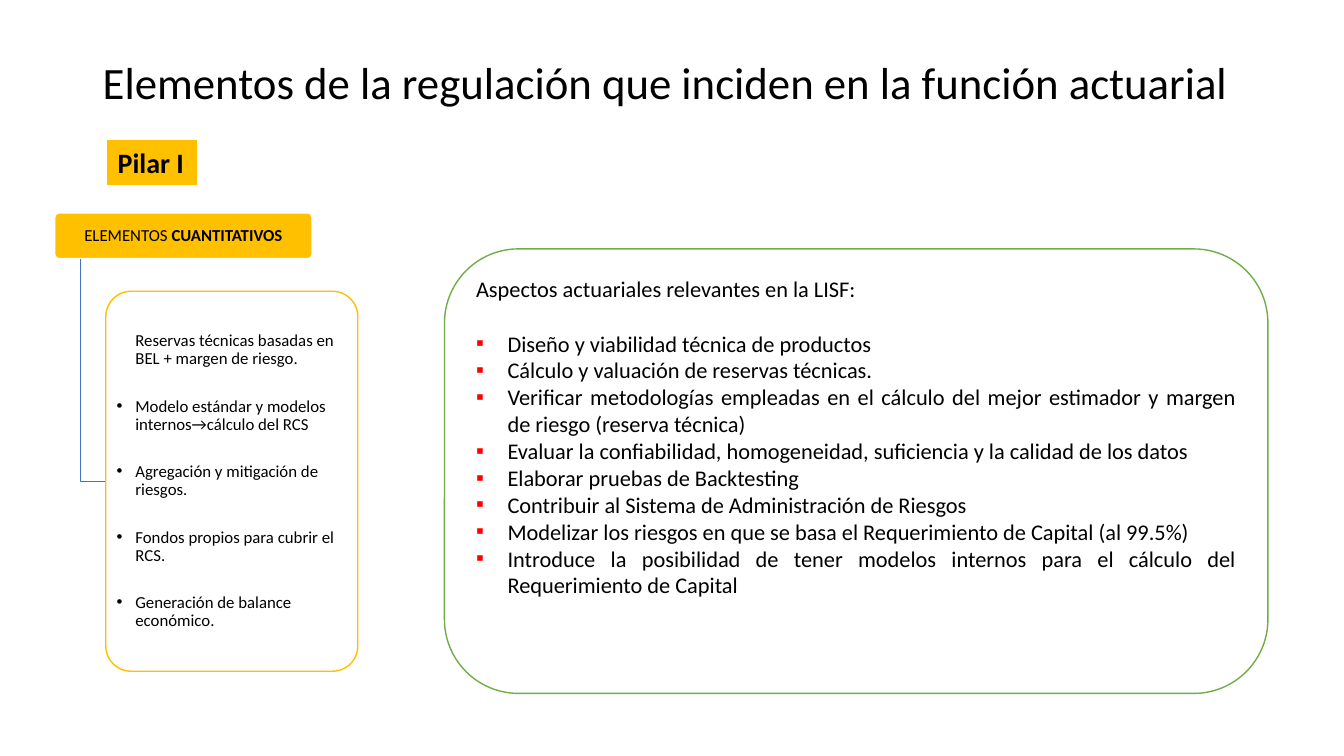
import pptx
import pptx.util
from lxml import etree
from pptx.dml.color import RGBColor
from pptx.enum.shapes import MSO_SHAPE
from pptx.enum.text import MSO_ANCHOR, MSO_AUTO_SIZE, PP_ALIGN
from pptx.oxml.ns import qn

Pt = pptx.util.Pt

# Content
TITLE = "Elementos de la regulación que inciden en la función actuarial"
PILLAR = "Pilar I"
HEADING = [("ELEMENTOS ", False), ("CUANTITATIVOS", True)]
QUANT_INTRO = "Reservas técnicas basadas en BEL + margen de riesgo."
QUANT_ITEMS = [
    "Modelo estándar y modelos internos→cálculo del RCS",
    "Agregación y mitigación de riesgos.",
    "Fondos propios para cubrir el RCS.",
    "Generación de balance económico.",
]
ASPECTS_INTRO = "Aspectos actuariales relevantes en la LISF:"
ASPECTS = [
    "Diseño y viabilidad técnica de productos",
    "Cálculo y valuación de reservas técnicas.",
    "Verificar metodologías empleadas en el cálculo del mejor estimador y margen de riesgo (reserva técnica)",
    "Evaluar la confiabilidad, homogeneidad, suficiencia y la calidad de los datos",
    "Elaborar pruebas de Backtesting",
    "Contribuir al Sistema de Administración de Riesgos",
    "Modelizar los riesgos en que se basa el Requerimiento de Capital (al 99.5%)",
    "Introduce la posibilidad de tener modelos internos para el cálculo del Requerimiento de Capital",
]

# Style
FONT = "Calibri"
BLACK = RGBColor(0x00, 0x00, 0x00)
WHITE = RGBColor(0xFF, 0xFF, 0xFF)
AMBER = RGBColor(0xFF, 0xC0, 0x00)
BLUE = RGBColor(0x44, 0x72, 0xC4)
GREEN = RGBColor(0x70, 0xAD, 0x47)
RED = RGBColor(0xFF, 0x00, 0x00)

# Layout: left, top, width, height in points
TITLE_BOX = (66.2, 21.6, 828, 78.5)
PILLAR_BOX = (77, 100.1, 63.4, 31.7)
HEADING_BOX = (38.9, 151.9, 184.3, 33.1)
QUANT_BOX = (75.6, 208.1, 180, 271.4)
ASPECTS_BOX = (317.5, 177.8, 588.2, 317.5)


def add_box(kind, box, fill, line, weight, anchor, radius=None, inset=None):
    sp = slide.shapes.add_shape(kind, *map(Pt, box))
    sp.shadow.inherit = False
    sp.fill.solid()
    sp.fill.fore_color.rgb = fill
    sp.line.color.rgb = line
    sp.line.width = Pt(weight)
    if radius is not None:
        sp.adjustments[0] = radius
    tf = sp.text_frame
    tf.word_wrap = True
    tf.vertical_anchor = anchor
    if inset is not None:
        tf.margin_left = tf.margin_right = Pt(inset)
        tf.margin_top = tf.margin_bottom = Pt(inset * 0.67)
    return sp


def add_run(p, text, size, bold=False):
    r = p.add_run()
    r.text = text
    r.font.name = FONT
    r.font.size = Pt(size)
    r.font.bold = bold
    r.font.color.rgb = BLACK


def set_indent(p, indent, bullet=None, color=BLACK):
    pPr = p._p.get_or_add_pPr()
    pPr.set("marL", str(Pt(indent)))
    pPr.set("indent", str(-Pt(indent) if bullet else 0))
    if bullet:
        clr = etree.SubElement(pPr, qn("a:buClr"))
        etree.SubElement(clr, qn("a:srgbClr")).set("val", str(color))
        etree.SubElement(pPr, qn("a:buFont")).set("typeface", "Arial")
        etree.SubElement(pPr, qn("a:buChar")).set("char", bullet)


prs = pptx.Presentation()
prs.slide_width, prs.slide_height = Pt(960), Pt(540)
slide = prs.slides.add_slide(prs.slide_layouts[5])

# Title
title = slide.shapes.title
title.left, title.top, title.width, title.height = map(Pt, TITLE_BOX)
tf = title.text_frame
tf.vertical_anchor = MSO_ANCHOR.MIDDLE
p = tf.paragraphs[0]
p.alignment = PP_ALIGN.LEFT
p.line_spacing = 0.9
add_run(p, TITLE, 32)

# Heading of the quantitative elements
sp = add_box(MSO_SHAPE.ROUNDED_RECTANGLE, HEADING_BOX, AMBER, WHITE, 1.5,
             MSO_ANCHOR.MIDDLE, 0.1, 2.4)
p = sp.text_frame.paragraphs[0]
p.alignment = PP_ALIGN.CENTER
p.line_spacing = 0.9
for text, bold in HEADING:
    add_run(p, text, 12, bold)

# Elbow from the heading to the list
x = HEADING_BOX[0] + HEADING_BOX[2] / 10
y = HEADING_BOX[1] + HEADING_BOX[3]
middle = QUANT_BOX[1] + QUANT_BOX[3] / 2
fb = slide.shapes.build_freeform(Pt(x), Pt(y))
fb.add_line_segments([(Pt(x), Pt(middle)), (Pt(QUANT_BOX[0]), Pt(middle))], close=False)
elbow = fb.convert_to_shape()
elbow.shadow.inherit = False
elbow.fill.background()
elbow.line.color.rgb = BLUE
elbow.line.width = Pt(1)

# List of quantitative elements
sp = add_box(MSO_SHAPE.ROUNDED_RECTANGLE, QUANT_BOX, WHITE, AMBER, 1,
             MSO_ANCHOR.MIDDLE, 0.1, 2.4)
tf = sp.text_frame
for i, text in enumerate([QUANT_INTRO] + QUANT_ITEMS):
    p = tf.add_paragraph() if i else tf.paragraphs[0]
    set_indent(p, 13.5, "•" if i else None)
    p.alignment = PP_ALIGN.LEFT
    p.line_spacing = 0.9
    if i:
        p.space_before = Pt(20.8)
    add_run(p, text, 12)

# Pillar label
sp = add_box(MSO_SHAPE.RECTANGLE, PILLAR_BOX, AMBER, AMBER, 0.75, MSO_ANCHOR.TOP)
tf = sp.text_frame
tf.word_wrap = False
tf.auto_size = MSO_AUTO_SIZE.SHAPE_TO_FIT_TEXT
p = tf.paragraphs[0]
p.alignment = PP_ALIGN.LEFT
add_run(p, PILLAR, 20, True)

# Actuarial aspects
sp = add_box(MSO_SHAPE.ROUNDED_RECTANGLE, ASPECTS_BOX, WHITE, GREEN, 1, MSO_ANCHOR.TOP)
tf = sp.text_frame
p = tf.paragraphs[0]
p.alignment = PP_ALIGN.JUSTIFY
add_run(p, ASPECTS_INTRO, 16)
for i, text in enumerate(ASPECTS):
    p = tf.add_paragraph()
    set_indent(p, 22.5, "▪", RED)
    p.alignment = PP_ALIGN.JUSTIFY
    if i == 0:
        p.space_before = Pt(19.5)
    add_run(p, text, 16)

prs.save("out.pptx")
